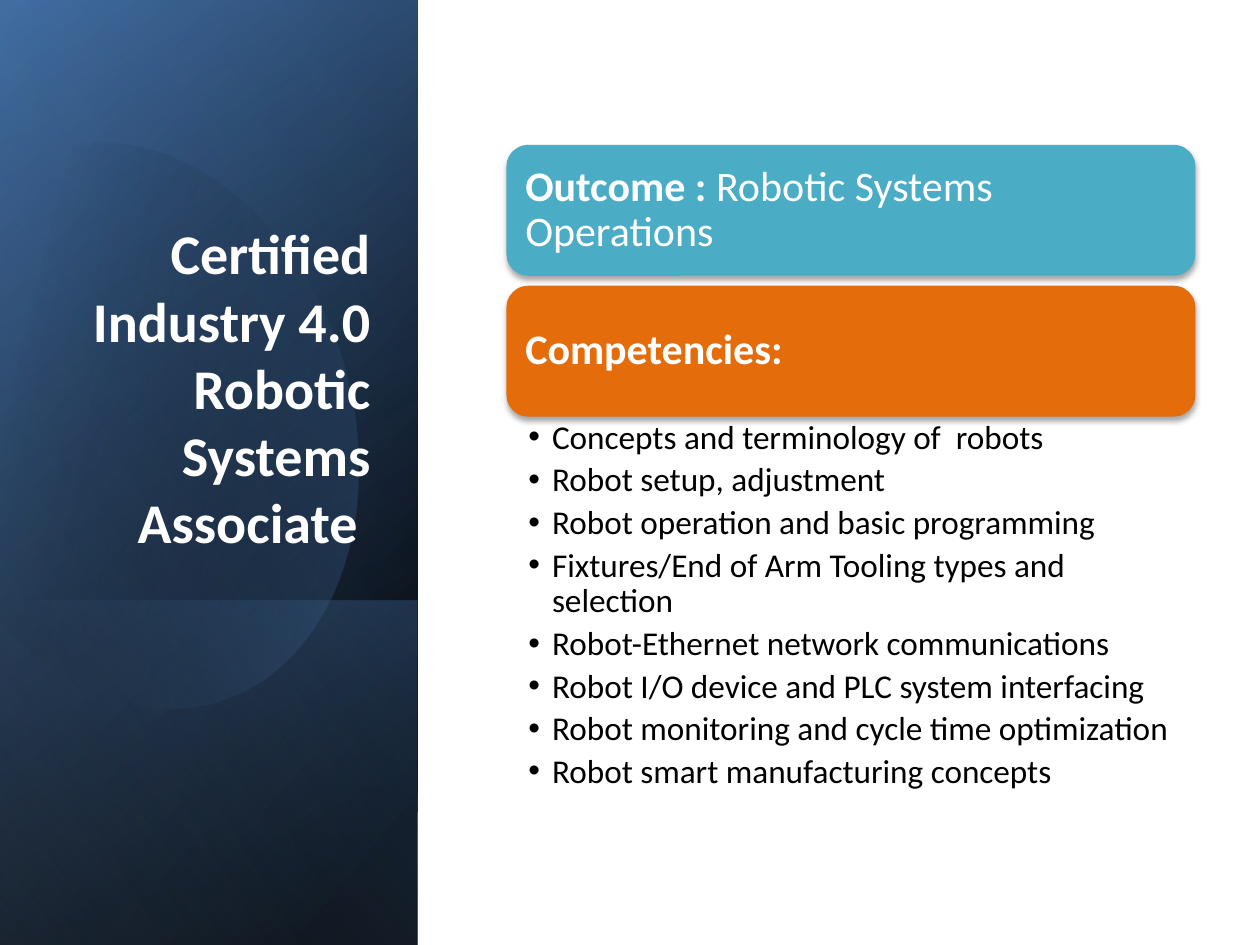
import math
from dataclasses import dataclass

from lxml import etree
from pptx import Presentation
from pptx import util as u
from pptx.dml.color import RGBColor
from pptx.enum import shapes, text
from pptx.oxml import ns


@dataclass(frozen=True)
class Theme:
    font: str = "Calibri"
    white: str = "FFFFFF"
    black: str = "000000"
    navy: str = "376092"
    blue: str = "4F81BD"
    pale: str = "95B3D7"
    teal: str = "4BACC6"
    orange: str = "E46C0A"
    title: int = 32
    heading: int = 24
    body: int = 19


THEME = Theme()
BULLET_INDENT = 0.48
COMPETENCIES = [
    "Concepts and terminology of  robots",
    "Robot setup, adjustment",
    "Robot operation and basic programming",
    "Fixtures/End of Arm Tooling types and selection",
    "Robot-Ethernet network communications",
    "Robot I/O device and PLC system interfacing",
    "Robot monitoring and cycle time optimization",
    "Robot smart manufacturing concepts",
]
# Ellipse outline in cm: a start, then lines (one point) and curves (three)
ELLIPSE_START = (2.44, 2.9)
ELLIPSE_STEPS = [
    [(4.34, 3.1), (6.2, 4.88), (6.93, 7.37)],
    [(7.8, 10.46), (6.65, 13.49), (4.34, 14.15)],
    [(2.9, 14.58), (1.35, 13.97), (0.18, 12.7)],
    [(-0.08, 12.4)],
    [(-0.64, 4.22)],
    [(-0.38, 3.91)],
    [(0.05, 3.48), (0.56, 3.18), (1.14, 3)],
    [(1.57, 2.87), (2.01, 2.84), (2.44, 2.9)],
]
ELLIPSE_CENTRE = (3.02, 8.5)
ELLIPSE_TILT = 16.1


def cm(*lengths):
    return [u.Cm(length) for length in lengths]


def apply(target, values):
    for name, value in values.items():
        setattr(target, name, value)


def add(parent, tag, **attributes):
    return etree.SubElement(parent, ns.qn(tag), attributes)


def add_colour(parent, colour, alpha):
    node = add(parent, "a:srgbClr", val=colour)
    if alpha < 100:
        add(node, "a:alpha", val=str(alpha * 1000))


def set_gradient(shape, stops, angle):
    """Stops are (position %, colour, opacity %); angle runs clockwise."""
    shape.shadow.inherit = False
    shape.line.fill.background()
    shape.fill.gradient()
    gradient = shape._element.spPr.find(ns.qn("a:gradFill"))
    stop_list = gradient.find(ns.qn("a:gsLst"))
    for stop in list(stop_list):
        stop_list.remove(stop)
    for position, colour, alpha in stops:
        add_colour(add(stop_list, "a:gs", pos=str(position * 1000)), colour, alpha)
    gradient.find(ns.qn("a:lin")).set("ang", str(angle * 60000))


def add_span(para, wording, size, colour, bold=False):
    span = para.add_run()
    span.text = wording
    apply(span.font, {"name": THEME.font, "size": u.Pt(size), "bold": bold})
    span.font.color.rgb = RGBColor.from_string(colour)


def add_text(page, box, margins, anchor):
    frame = page.shapes.add_textbox(*cm(*box)).text_frame
    sides = ("margin_left", "margin_top", "margin_right", "margin_bottom")
    apply(frame, dict(zip(sides, cm(*margins))))
    apply(frame, {"word_wrap": True, "vertical_anchor": anchor})
    return frame


def add_turned_panel(page, box, stops, angle):
    """A mirrored rectangle on its side that covers the given box."""
    left, top, width, height = box
    shift = (width - height) / 2
    panel = page.shapes.add_shape(
        shapes.MSO_SHAPE.RECTANGLE, *cm(left + shift, top - shift, height, width))
    panel.rotation = 90
    panel._element.spPr.find(ns.qn("a:xfrm")).set("flipH", "1")
    set_gradient(panel, stops, angle)


def curve_points(start, controls, steps=24):
    if len(controls) == 1:
        return controls
    corners = [start] + controls
    points = []
    for step in range(1, steps + 1):
        t = step / steps
        weights = [math.comb(3, i) * t**i * (1 - t) ** (3 - i) for i in range(4)]
        points.append(tuple(
            sum(w * corner[axis] for w, corner in zip(weights, corners))
            for axis in (0, 1)))
    return points


def add_ellipse(page, left, top):
    outline = [ELLIPSE_START]
    for controls in ELLIPSE_STEPS:
        outline += curve_points(outline[-1], controls)
    cos, sin = math.cos(math.radians(ELLIPSE_TILT)), math.sin(math.radians(ELLIPSE_TILT))
    centre_x, centre_y = ELLIPSE_CENTRE
    upright = []
    for x, y in outline:
        dx, dy = x - centre_x, y - centre_y
        upright.append(cm(left + centre_x + dx * cos - dy * sin,
                          top + centre_y + dx * sin + dy * cos))
    builder = page.shapes.build_freeform(*upright[0])
    builder.add_line_segments(upright[1:], close=True)
    ellipse = builder.convert_to_shape()
    ellipse.rotation = 360 - ELLIPSE_TILT
    set_gradient(ellipse, [(29, THEME.black, 0), (100, THEME.blue, 43)], 30)


def add_title_panel(page, box):
    left, top, width, height = box
    # Layered gradients
    add_turned_panel(page, box, [(8, THEME.black, 100), (100, THEME.navy, 100)], 50)
    add_turned_panel(page, box, [(0, THEME.black, 0), (99, THEME.blue, 46)], 30)
    foot = 6.95
    add_turned_panel(page, (left, top + height - foot, width, foot),
                     [(2, THEME.blue, 29), (100, THEME.black, 30)], 130)
    add_ellipse(page, left, top)
    add_turned_panel(page, box, [(0, THEME.black, 0), (99, THEME.pale, 11)], 120)
    # Title
    frame = add_text(page, (left + 1.22, top + 4.67, 6.5, 6.65),
                     (0.25, 0.13, 0.25, 0.13), text.MSO_ANCHOR.BOTTOM)
    para = frame.paragraphs[0]
    para.alignment = text.PP_ALIGN.RIGHT
    add_span(para, "Certified Industry 4.0 Robotic Systems Associate ",
             THEME.title, THEME.white, True)


def add_card(page, box, colour, spans):
    left, top, width, height = box
    card = page.shapes.add_shape(shapes.MSO_SHAPE.ROUNDED_RECTANGLE, *cm(*box))
    card.fill.solid()
    card.fill.fore_color.rgb = RGBColor.from_string(colour)
    card.line.fill.background()
    card.shadow.inherit = False
    effects = card._element.spPr.find(ns.qn("a:effectLst"))
    shadow = add(effects, "a:outerShdw", blurRad=str(u.Pt(3.1)), dist=str(u.Pt(1.8)),
                 dir=str(90 * 60000), rotWithShape="0")
    add_colour(shadow, THEME.black, 35)
    inset = 0.13
    frame = add_text(page, (left + inset, top + inset, width - 2 * inset, height - 2 * inset),
                     [0.25] * 4, text.MSO_ANCHOR.MIDDLE)
    para = frame.paragraphs[0]
    para.line_spacing = 0.9
    for wording, bold in spans:
        add_span(para, wording, THEME.heading, THEME.white, bold)


def add_bullets(page, box, lines):
    frame = add_text(page, box, (0.44, 0.08, 0.48, 0.08), text.MSO_ANCHOR.TOP)
    for index, line in enumerate(lines):
        para = frame.add_paragraph() if index else frame.paragraphs[0]
        apply(para, {"line_spacing": 0.9, "space_after": u.Pt(3.8)})
        properties = para._p.get_or_add_pPr()
        indent = u.Cm(BULLET_INDENT)
        properties.set("marL", str(indent))
        properties.set("indent", str(-indent))
        add(properties, "a:buFont", typeface="Arial")
        add(properties, "a:buChar", char="•")
        add_span(para, line, THEME.body, THEME.black)


def add_content(page, box):
    left, top, width, height = box
    card_height, gap = 2.64, 0.2
    cards = [
        (THEME.teal, [("Outcome : ", True), ("Robotic Systems Operations", False)]),
        (THEME.orange, [("Competencies:", True)]),
    ]
    for index, (colour, spans) in enumerate(cards):
        card_top = top + index * (card_height + gap)
        add_card(page, (left, card_top, width, card_height), colour, spans)
    used = len(cards) * (card_height + gap) - gap
    add_bullets(page, (left, top + used, width, height - used), COMPETENCIES)


def main():
    deck = Presentation()
    apply(deck, {"slide_width": u.Cm(25.4), "slide_height": u.Cm(19.05)})
    page = deck.slides.add_slide(deck.slide_layouts[6])
    add_title_panel(page, (0, 0, 8.42, 19.05))
    add_content(page, (10.21, 2.92, 13.89, 13.49))
    deck.save("out.pptx")


if __name__ == "__main__":
    main()
